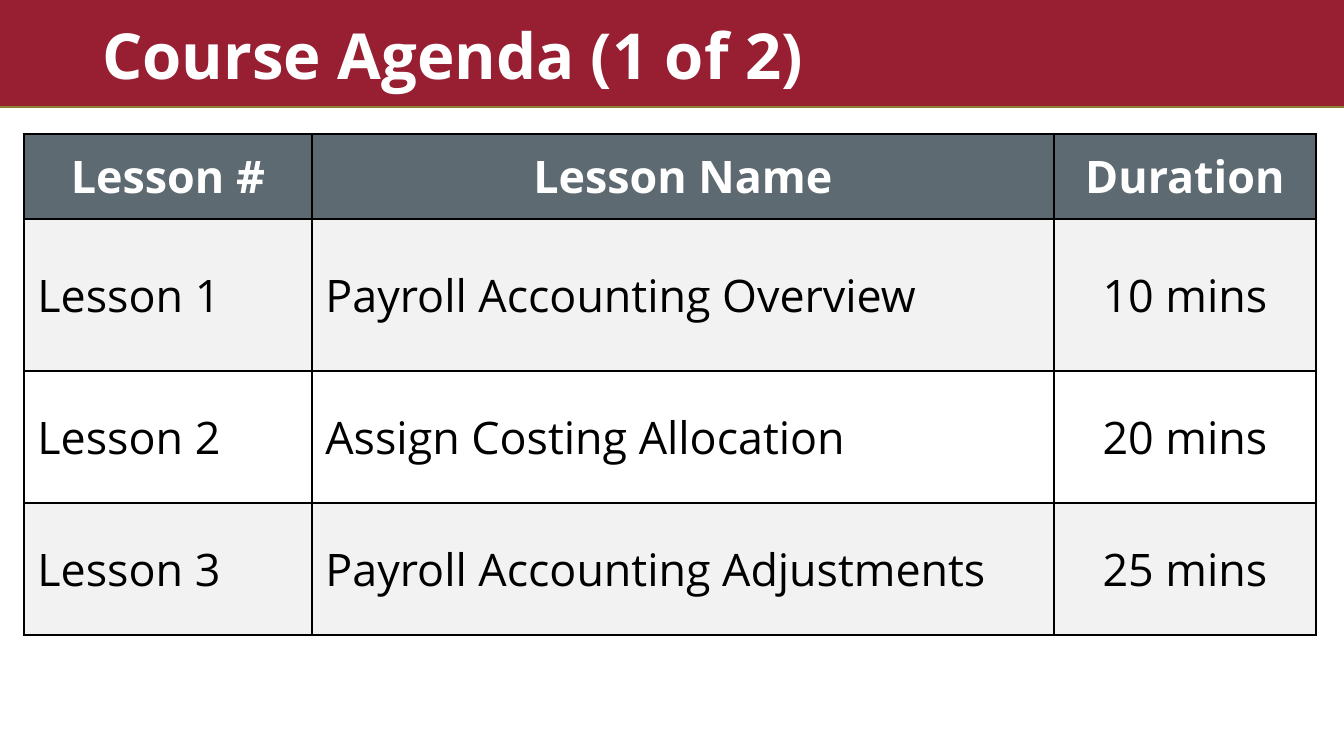
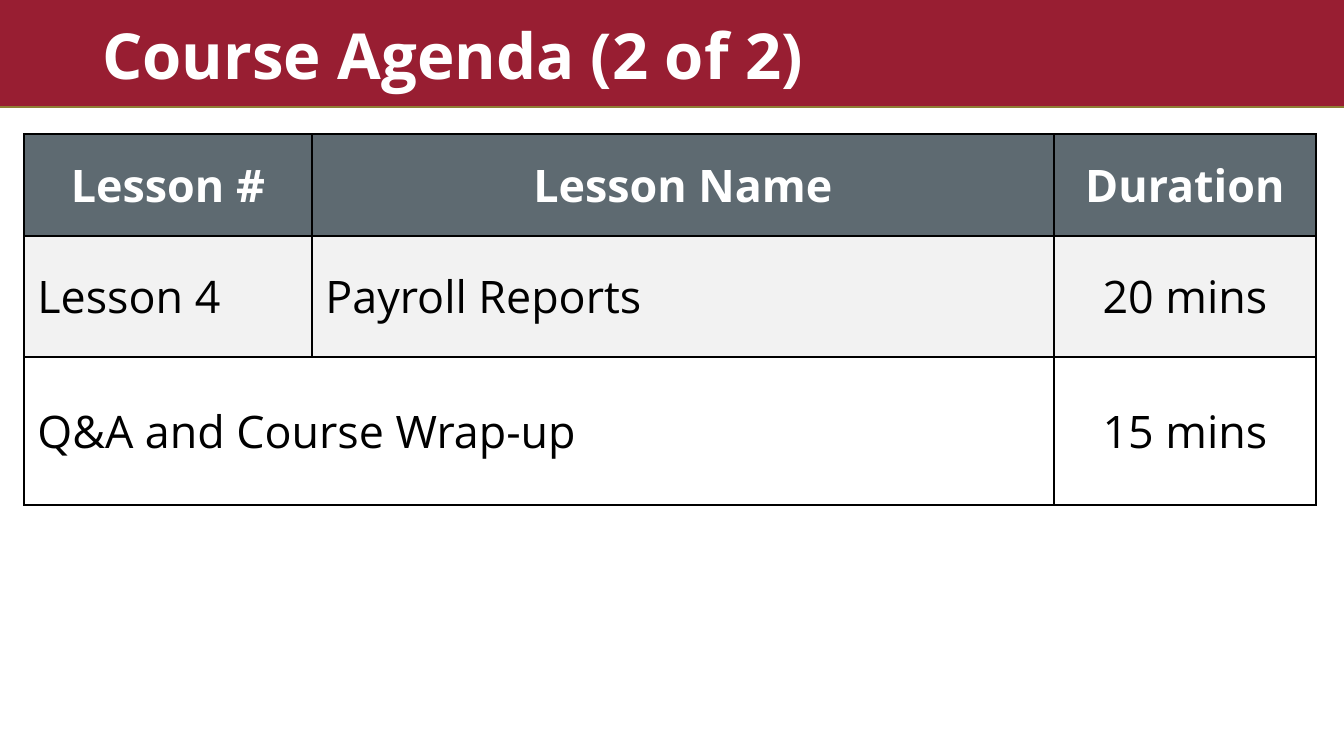
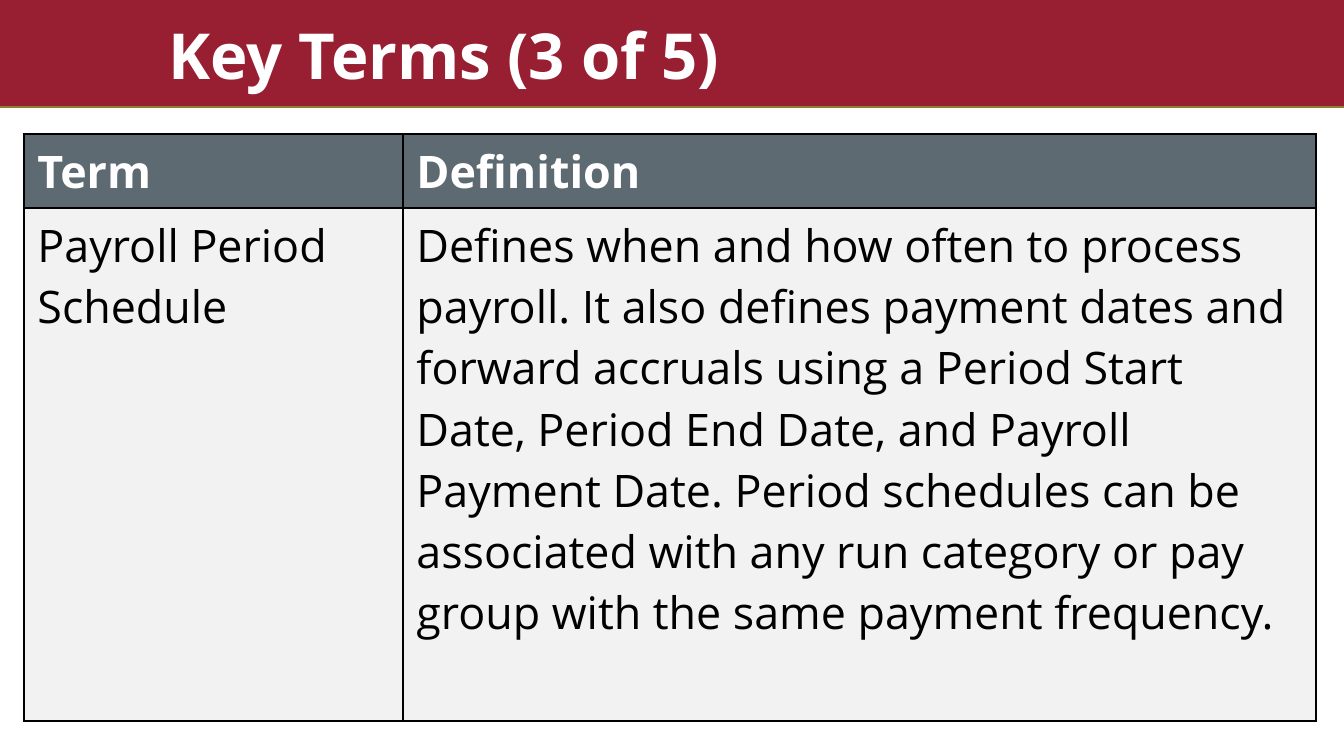
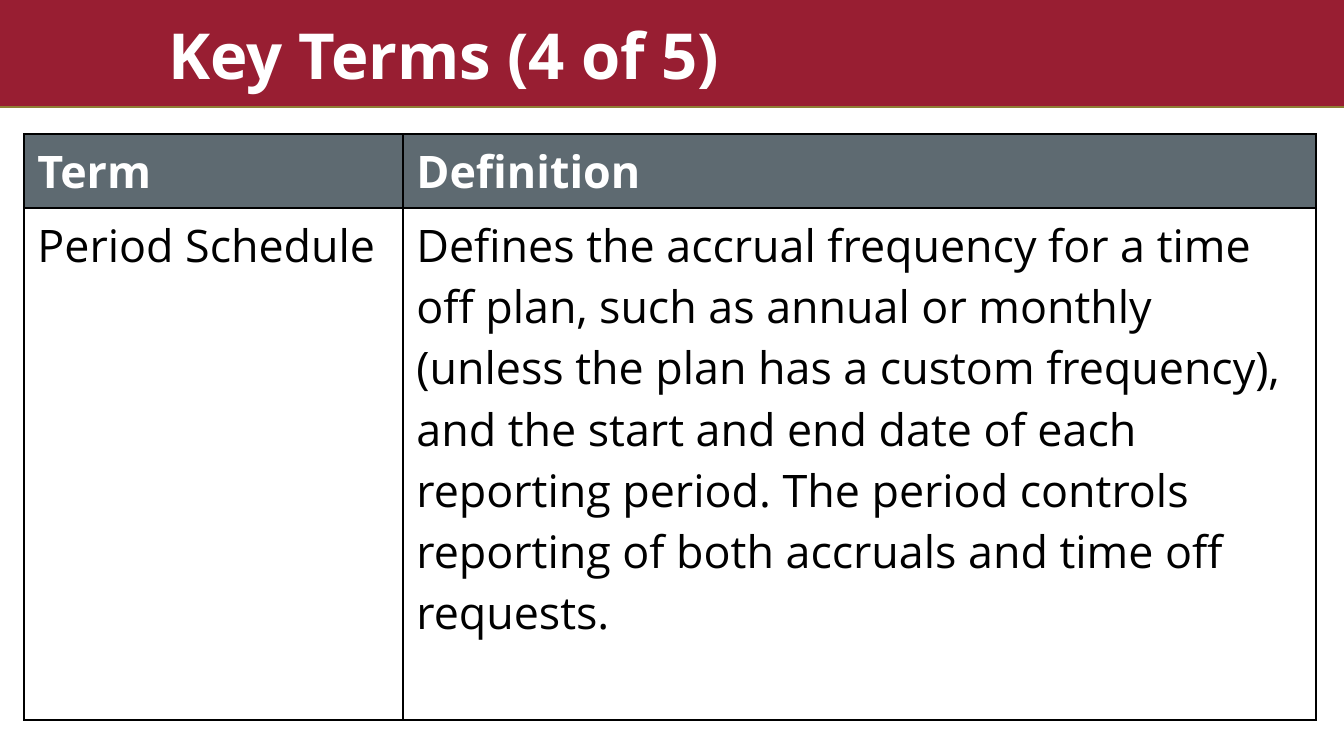
from lxml import etree
from pptx import Presentation, util as u
from pptx.dml.color import RGBColor
from pptx.enum import shapes, text
from pptx.oxml.ns import qn

CRIMSON = RGBColor(0x98, 0x1E, 0x32)
GOLD = RGBColor(0x8F, 0x7E, 0x35)
SLATE = RGBColor(0x5E, 0x6A, 0x71)
PALE = RGBColor(0xF2, 0xF2, 0xF2)
WHITE = RGBColor(0xFF, 0xFF, 0xFF)
BLACK = RGBColor(0x00, 0x00, 0x00)
FONT = "Open Sans"
SLIDE_W, SLIDE_H, BAND_H = 1344, 756, 107
TABLE_LEFT, TABLE_TOP = 24, 134

AGENDA = dict(title_box=(35, 17, 1300, 83), cols=(288, 742, 262), centred=(0, 1, 2),
              body_anchor=text.MSO_ANCHOR.MIDDLE,
              header=("Lesson #", "Lesson Name", "Duration"))
TERMS = dict(title_box=(101, 17, 1218, 83), cols=(379, 913), centred=(),
             body_anchor=text.MSO_ANCHOR.TOP, header=("Term", "Definition"))

# title, table kind, row heights, fills of the body rows in turn, body rows;
# None continues the cell to its left
SLIDES = [
    ("Course Agenda (1 of 2)", AGENDA, (85, 152, 132, 132), (PALE, None), [
        ("Lesson 1", "Payroll Accounting Overview", "10 mins"),
        ("Lesson 2", "Assign Costing Allocation", "20 mins"),
        ("Lesson 3", "Payroll Accounting Adjustments", "25 mins")]),
    ("Course Agenda (2 of 2)", AGENDA, (102, 121, 148), (PALE, None), [
        ("Lesson 4", "Payroll Reports", "20 mins"),
        ("Q&A and Course Wrap-up", None, "15 mins")]),
    ("Key Terms (3 of 5)", TERMS, (74, 513), (PALE, None), [
        ("Payroll Period Schedule",
         "Defines when and how often to process payroll. It also defines payment "
         "dates and forward accruals using a Period Start Date, Period End Date, "
         "and Payroll Payment Date. Period schedules can be associated with any "
         "run category or pay group with the same payment frequency.")]),
    ("Key Terms (4 of 5)", TERMS, (74, 512), (None, PALE), [
        ("Period Schedule",
         "Defines the accrual frequency for a time off plan, such as annual or "
         "monthly (unless the plan has a custom frequency), and the start and end "
         "date of each reporting period. The period controls reporting of both "
         "accruals and time off requests.")]),
]


def px(n):
    return u.Emu(round(n * 914400 / 134.4))


def style_text(p, size, color, bold):
    for r in p.runs:
        r.font.name = FONT
        r.font.size = u.Pt(size)
        r.font.bold = bold
        r.font.color.rgb = color


prs = Presentation()
prs.slide_width, prs.slide_height = px(SLIDE_W), px(SLIDE_H)
layout = prs.slide_layouts[5]

for number, (title, kind, heights, fills, body) in enumerate(SLIDES):
    s = prs.slides.add_slide(layout)

    # The band and its rule are drawn once, then moved to the shared layout
    if number == 0:
        band = s.shapes.add_shape(shapes.MSO_SHAPE.RECTANGLE, 0, 0, px(SLIDE_W), px(BAND_H))
        band.shadow.inherit = False
        band.fill.solid()
        band.fill.fore_color.rgb = CRIMSON
        band.line.fill.background()
        rule = s.shapes.add_connector(shapes.MSO_CONNECTOR.STRAIGHT,
                                      0, px(BAND_H), px(SLIDE_W), px(BAND_H))
        rule.line.color.rgb = GOLD
        rule.line.width = u.Pt(1)
        etree.SubElement(rule.element.spPr, qn("a:effectLst"))
        layout.shapes.element.insert(2, band.element)
        layout.shapes.element.insert(3, rule.element)

    sp = s.shapes.title
    sp.left, sp.top, sp.width, sp.height = map(px, kind["title_box"])
    tf = sp.text_frame
    tf.text = title
    tf.word_wrap = True
    tf.auto_size = text.MSO_AUTO_SIZE.SHAPE_TO_FIT_TEXT
    tf.vertical_anchor = text.MSO_ANCHOR.BOTTOM
    tf.margin_left = tf.margin_right = u.Inches(0.5)
    tf.margin_top = tf.margin_bottom = u.Inches(0.05)
    p = tf.paragraphs[0]
    p.alignment = text.PP_ALIGN.LEFT
    p.line_spacing = 0.9
    style_text(p, 34, WHITE, True)

    cols = kind["cols"]
    table = s.shapes.add_table(len(heights), len(cols), px(TABLE_LEFT), px(TABLE_TOP),
                               px(sum(cols)), px(sum(heights))).table
    table.horz_banding = False
    for column, width in zip(table.columns, cols):
        column.width = px(width)
    for row, height in zip(table.rows, heights):
        row.height = px(height)

    for i, row in enumerate([kind["header"], *body]):
        is_header = i == 0
        fill = SLATE if is_header else fills[(i - 1) % 2]
        for j, words in enumerate(row):
            cell = table.cell(i, j)
            tcPr = cell._tc.get_or_add_tcPr()
            for side in ("a:lnL", "a:lnR", "a:lnT", "a:lnB"):
                ln = etree.SubElement(tcPr, qn(side), w=str(u.Pt(1)))
                solid = etree.SubElement(ln, qn("a:solidFill"))
                etree.SubElement(solid, qn("a:srgbClr"), val=str(BLACK))
            if fill is None:
                cell.fill.background()
            else:
                cell.fill.solid()
                cell.fill.fore_color.rgb = fill
            if words is None:
                table.cell(i, j - 1).merge(cell)
                continue
            cell.vertical_anchor = text.MSO_ANCHOR.MIDDLE if is_header else kind["body_anchor"]
            cell.text_frame.text = words
            p = cell.text_frame.paragraphs[0]
            centred = j in kind["centred"] and (is_header or j == len(cols) - 1)
            p.alignment = text.PP_ALIGN.CENTER if centred else text.PP_ALIGN.LEFT
            style_text(p, 24, WHITE if is_header else BLACK, is_header)

prs.save("out.pptx")
